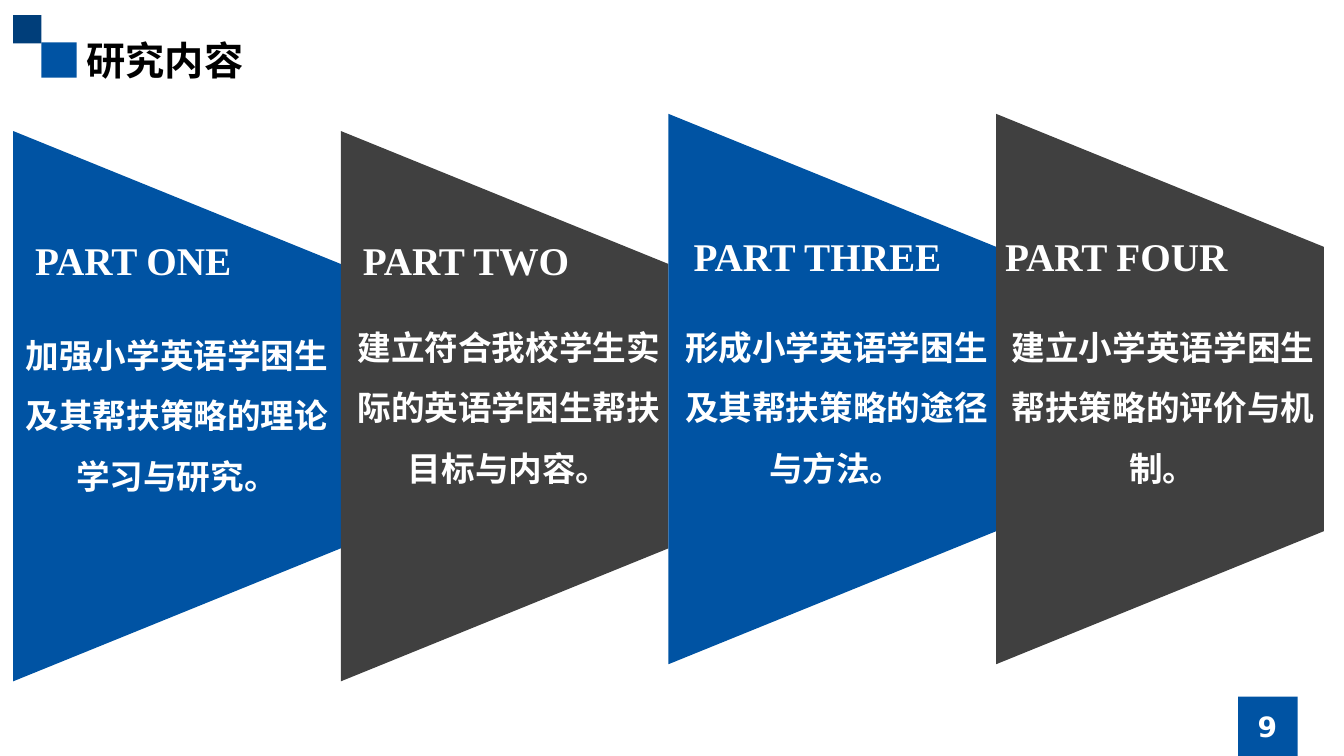
from dataclasses import dataclass

from lxml.etree import SubElement
from pptx import Presentation
from pptx.dml.color import RGBColor
from pptx.enum.shapes import MSO_SHAPE
from pptx.enum.text import MSO_ANCHOR, MSO_AUTO_SIZE, PP_ALIGN
from pptx.oxml.ns import qn
from pptx.util import Inches, Pt


@dataclass(frozen=True)
class Theme:
    blue: str = "0053A3"
    navy: str = "003E7A"
    gray: str = "404040"
    black: str = "000000"
    white: str = "FFFFFF"
    sans: str = "DejaVu Sans"
    cjk: str = "Noto Sans CJK SC"
    serif: str = "Times New Roman"
    heading_size: int = 28
    body_size: int = 24
    number_size: int = 20


class SlideBuilder:
    def __init__(self, prs, theme):
        self.theme = theme
        self.s = prs.slides.add_slide(prs.slide_layouts[5])

    def shape(self, kind, x, y, w, h, color):
        sp = self.s.shapes.add_shape(kind, Inches(x), Inches(y), Inches(w), Inches(h))
        sp.shadow.inherit = False
        sp.fill.solid()
        sp.fill.fore_color.rgb = RGBColor.from_string(color)
        sp.line.fill.background()
        return sp

    def trapezoid(self, x, y, w, h, color):
        sp = self.shape(MSO_SHAPE.TRAPEZOID, x + (w - h) / 2, y + (h - w) / 2, h, w, color)
        sp.rotation = 90
        sp.adjustments[0] = 0.406

    def format_text(self, tf, text, size, font, color, align, spacing):
        tf.text = text
        p = tf.paragraphs[0]
        p.alignment = align
        p.line_spacing = spacing
        r = p.runs[0]
        r.font.size = Pt(size)
        r.font.bold = True
        r.font.name = font
        r.font.color.rgb = RGBColor.from_string(color)
        SubElement(r.font._element, qn("a:ea")).set("typeface", self.theme.cjk)

    def title(self, text, x, y, w, h):
        sp = self.s.shapes.title
        sp.left, sp.top, sp.width, sp.height = Inches(x), Inches(y), Inches(w), Inches(h)
        tf = sp.text_frame
        tf.vertical_anchor = MSO_ANCHOR.TOP
        tf.auto_size = MSO_AUTO_SIZE.NONE
        self.format_text(tf, text, self.theme.heading_size, self.theme.cjk,
                         self.theme.black, PP_ALIGN.LEFT, 1.0)

    def text(self, text, x, y, w, h, size, font, align=PP_ALIGN.CENTER,
             spacing=1.5, wrap=True, anchor=MSO_ANCHOR.TOP):
        tf = self.s.shapes.add_textbox(Inches(x), Inches(y), Inches(w), Inches(h)).text_frame
        tf.word_wrap = wrap
        tf.vertical_anchor = anchor
        self.format_text(tf, text, size, font, self.theme.white, align, spacing)


PANEL_LEFT, PANEL_WIDTH, PANEL_HEIGHT = 0.13, 3.25, 5.46
PARTS = [
    ("PART ONE", 0.25, 2.06, 2.17, "加强小学英语学困生及其帮扶策略的理论学习与研究。", 0.13, 3.07),
    ("PART TWO", 3.5, 2.06, 2.27, "建立符合我校学生实际的英语学困生帮扶目标与内容。", 3.42, 2.99),
    ("PART THREE", 6.78, 2.02, 2.68, "形成小学英语学困生及其帮扶策略的途径与方法。", 6.67, 2.99),
    ("PART FOUR", 9.87, 2.02, 2.41, "建立小学英语学困生帮扶策略的评价与机制。", 9.91, 2.99),
]


def main():
    prs = Presentation()
    prs.slide_width, prs.slide_height = Inches(13.33), Inches(7.5)
    theme = Theme()
    slide = SlideBuilder(prs, theme)

    slide.shape(MSO_SHAPE.RECTANGLE, 0.41, 0.42, 0.35, 0.35, theme.blue)
    slide.shape(MSO_SHAPE.RECTANGLE, 0.13, 0.15, 0.28, 0.28, theme.navy)
    slide.shape(MSO_SHAPE.RECTANGLE, 12.28, 6.91, 0.59, 0.59, theme.blue)
    slide.title("研究内容", 0.76, 0.31, 5.91, 0.57)
    slide.text("9", 11.81, 7.01, 1.52, 0.4, theme.number_size, theme.sans,
               spacing=1.0, anchor=MSO_ANCHOR.MIDDLE)

    for i, (label, label_x, label_y, label_w, body, body_x, body_y) in enumerate(PARTS):
        panel_top = 1.3 if i < 2 else 1.13
        slide.trapezoid(PANEL_LEFT + i * PANEL_WIDTH, panel_top, PANEL_WIDTH, PANEL_HEIGHT,
                        theme.gray if i % 2 else theme.blue)
        slide.text(label, label_x, label_y, label_w, 0.81, theme.heading_size, theme.serif,
                   align=PP_ALIGN.LEFT, wrap=False)
        slide.text(body, body_x, body_y, PANEL_WIDTH, 1.92, theme.body_size, theme.sans)

    prs.save("out.pptx")


if __name__ == "__main__":
    main()
